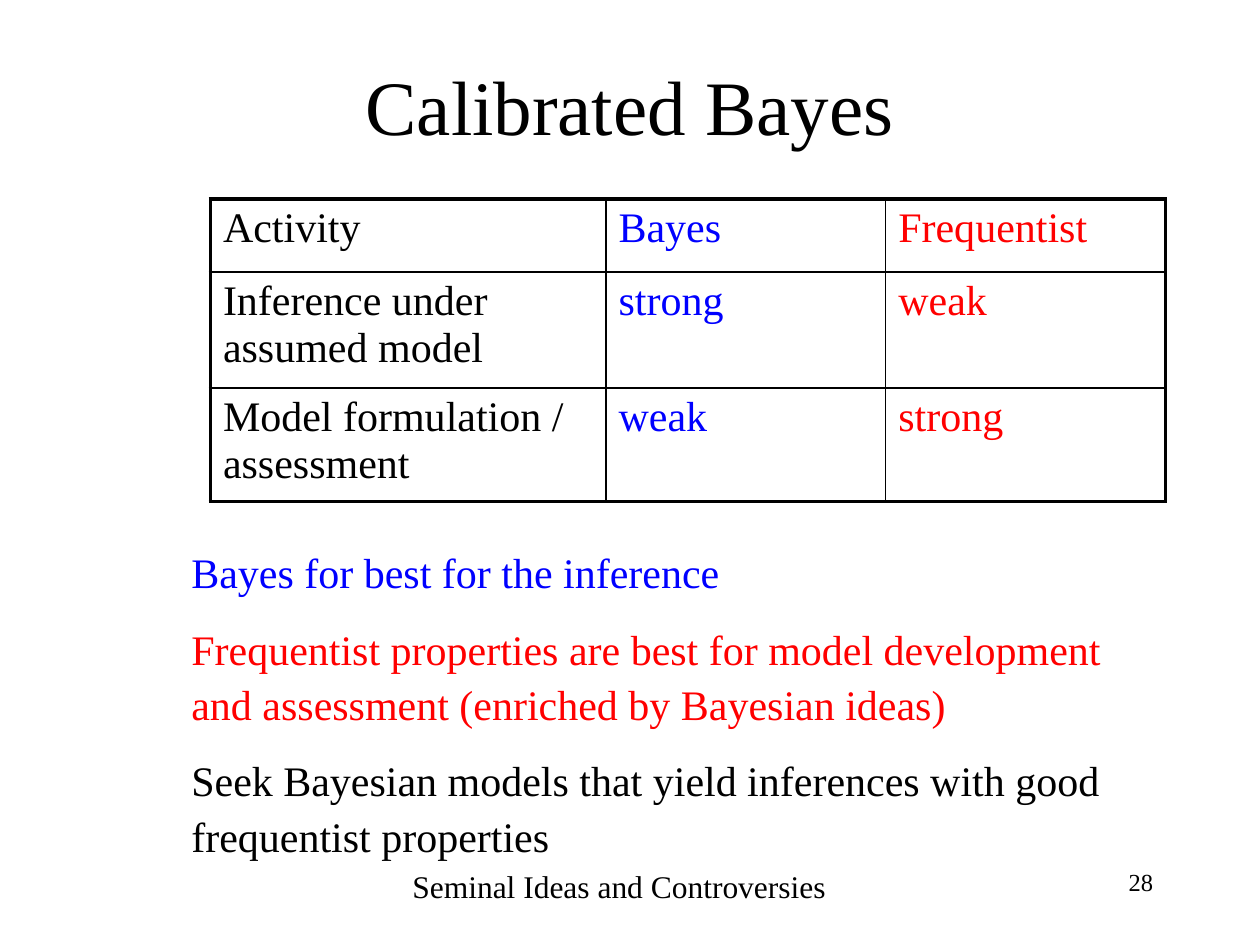
import pptx
import pptx.util
import pptx.dml.color
import pptx.enum.text
import pptx.oxml
from pptx.oxml import ns

Inches, Pt = pptx.util.Inches, pptx.util.Pt
ALIGN = pptx.enum.text.PP_ALIGN
ANCHOR = pptx.enum.text.MSO_ANCHOR
FONT = "Times New Roman"
BLACK, BLUE, RED = "000000", "0000FF", "FF0000"
THIN, THICK = 1, 2.25

ROWS = [
    ("Activity", "Bayes", "Frequentist"),
    ("Inference under assumed model", "strong", "weak"),
    ("Model formulation / assessment", "weak", "strong"),
]
POINTS = [
    ("Bayes for best for the inference", BLUE),
    ("Frequentist properties are best for model development "
     "and assessment (enriched by Bayesian ideas)", RED),
    ("Seek Bayesian models that yield inferences with good "
     "frequentist properties", BLACK),
]


def color(code):
    return pptx.dml.color.RGBColor.from_string(code)


def style(para, size, code):
    for run in para.runs:
        run.font.name = FONT
        run.font.size = Pt(size)
        run.font.color.rgb = color(code)


def add_text(slide, box, lines, size, align=ALIGN.LEFT,
             anchor=ANCHOR.TOP, gap=0, pitch=1.0):
    """Text box with one paragraph for each (text, colour) pair."""
    frame = slide.shapes.add_textbox(*map(Inches, box)).text_frame
    frame.word_wrap = True
    frame.vertical_anchor = anchor
    frame.text = "\n".join(text for text, _ in lines)
    for i, (para, (_, code)) in enumerate(zip(frame.paragraphs, lines)):
        para.alignment = align
        para.line_spacing = pitch
        para.space_before = Pt(gap if i else 0)
        style(para, size, code)


def set_edge(cell, side, width):
    line = pptx.oxml.parse_xml(
        f'<a:{side} {ns.nsdecls("a")} w="{Pt(width)}"><a:solidFill>'
        f'<a:srgbClr val="{BLACK}"/></a:solidFill></a:{side}>')
    props = cell._tc.get_or_add_tcPr()
    # Edges come before the fill, in the order they are added
    props.insert(len(props.findall("*")), line)


def add_grid(slide, box, widths, heights, rows, codes):
    """Table with thin inner lines and a thick outer frame."""
    nrows, ncols = len(rows), len(widths)
    grid = slide.shapes.add_table(nrows, ncols, *map(Inches, box)).table
    grid.first_row = grid.horz_banding = False
    for col, width in zip(grid.columns, widths):
        col.width = Inches(width)
    for row, height in zip(grid.rows, heights):
        row.height = Inches(height)
    for r, texts in enumerate(rows):
        for c, text in enumerate(texts):
            cell = grid.cell(r, c)
            cell.text = text
            style(cell.text_frame.paragraphs[0], 24, codes[c])
            outer = {"lnL": c == 0, "lnR": c == ncols - 1,
                     "lnT": r == 0, "lnB": r == nrows - 1}
            for side, thick in outer.items():
                set_edge(cell, side, THICK if thick else THIN)
            cell.fill.background()


def main():
    deck = pptx.Presentation()
    deck.slide_width, deck.slide_height = Inches(10), Inches(7.5)
    slide = deck.slides.add_slide(deck.slide_layouts[6])

    # Title
    add_text(slide, (0.75, 0.42, 8.5, 0.83), [("Calibrated Bayes", BLACK)],
             44, ALIGN.CENTER, ANCHOR.MIDDLE)

    # Comparison table
    add_grid(slide, (1.67, 1.58, 7.58, 2.4), (3.14, 2.22, 2.22),
             (0.58, 0.92, 0.9), ROWS, (BLACK, BLUE, RED))

    # Conclusions
    add_text(slide, (1.42, 4.25, 7.75, 2.52), POINTS, 24, gap=12, pitch=1.1)

    # Footer and page number
    add_text(slide, (3, 6.83, 3.83, 0.5),
             [("Seminal Ideas and Controversies", BLACK)], 18, ALIGN.CENTER)
    add_text(slide, (7.17, 6.83, 2.08, 0.5), [("28", BLACK)], 14, ALIGN.RIGHT)

    deck.save("out.pptx")


if __name__ == "__main__":
    main()
